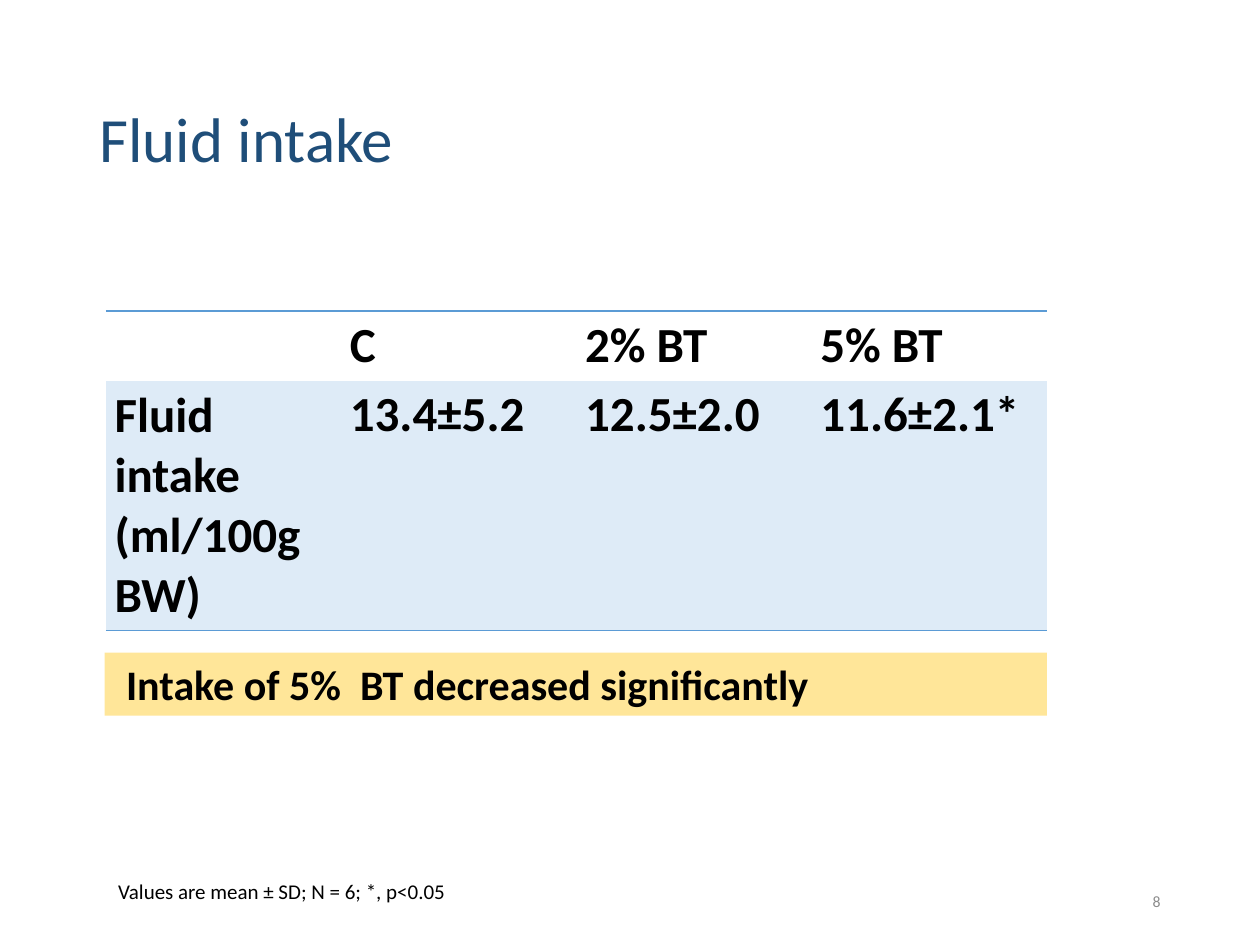
from lxml.etree import SubElement
from pptx import Presentation
from pptx.dml.color import RGBColor
from pptx.enum.shapes import MSO_SHAPE as Shape
from pptx.enum.text import MSO_ANCHOR as Anchor, PP_ALIGN as Align
from pptx.oxml.ns import qn
from pptx.util import Inches, Pt

COLORS = {
    "title": "1F4E79",
    "text": "000000",
    "number": "8C8C8C",
    "rule": "5B9BD5",
    "band": "DEEBF7",
    "banner": "FFE699",
}


def color(name):
    return RGBColor.from_string(COLORS[name])


class SlideBuilder:
    font_name = "Calibri"

    def __init__(self, presentation):
        self.slide = presentation.slides.add_slide(presentation.slide_layouts[5])

    def fill_text(self, frame, text, size, ink="text", bold=False,
                  align=Align.LEFT, spacing=1.0, **frame_format):
        for name, value in frame_format.items():
            setattr(frame, name, value)
        paragraph = frame.paragraphs[0]
        paragraph.alignment = align
        paragraph.line_spacing = spacing
        run = paragraph.add_run()
        run.text = text
        font_format = {"name": self.font_name, "size": Pt(size), "bold": bold}
        for name, value in font_format.items():
            setattr(run.font, name, value)
        run.font.color.rgb = color(ink)

    def title(self, text, left, top, width, height):
        shape = self.slide.shapes.title
        box = {"left": left, "top": top, "width": width, "height": height}
        for name, value in box.items():
            setattr(shape, name, Inches(value))
        self.fill_text(shape.text_frame, text, 36, "title", spacing=0.9,
                       vertical_anchor=Anchor.MIDDLE)

    def text(self, text, box, size, **text_format):
        shape = self.slide.shapes.add_textbox(*map(Inches, box))
        self.fill_text(shape.text_frame, text, size, **text_format)

    def banner(self, text, box):
        shape = self.slide.shapes.add_shape(Shape.RECTANGLE, *map(Inches, box))
        shape.shadow.inherit = False
        shape.fill.solid()
        shape.fill.fore_color.rgb = color("banner")
        shape.line.fill.background()
        self.fill_text(shape.text_frame, text, 24, bold=True, word_wrap=True,
                       margin_left=Inches(0.17), vertical_anchor=Anchor.TOP)

    def borders(self, cell, ruled_sides):
        properties = cell._tc.get_or_add_tcPr()
        for side in ("L", "R", "T", "B"):
            line = SubElement(properties, qn(f"a:ln{side}"), w=str(Pt(1)))
            if side in ruled_sides:
                fill = SubElement(line, qn("a:solidFill"))
                SubElement(fill, qn("a:srgbClr"), val=COLORS["rule"])
            else:
                SubElement(line, qn("a:noFill"))

    def table(self, rows, box, row_heights):
        table = self.slide.shapes.add_table(
            len(rows), len(rows[0]), *map(Inches, box)).table
        table.first_row = table.horz_banding = False
        for row, height in zip(table.rows, row_heights):
            row.height = Inches(height)
        for row_index, values in enumerate(rows):
            for column_index, value in enumerate(values):
                cell = table.cell(row_index, column_index)
                is_value = row_index > 0 and column_index > 0
                vertical = Inches(0 if is_value else 0.04)
                margins = {"margin_left": Inches(0.07), "margin_right": Inches(0.07),
                           "margin_top": vertical, "margin_bottom": vertical}
                for name, margin in margins.items():
                    setattr(cell, name, margin)
                # Borders come before the fill in the cell properties
                self.borders(cell, "B" if row_index else "TB")
                if row_index:
                    cell.fill.solid()
                    cell.fill.fore_color.rgb = color("band")
                else:
                    cell.fill.background()
                if value:
                    self.fill_text(cell.text_frame, value, 28, bold=True,
                                   spacing=1.07 if is_value else 1.0)


def main():
    presentation = Presentation()
    presentation.slide_width = Inches(10)
    presentation.slide_height = Inches(7.5)
    builder = SlideBuilder(presentation)

    # Title
    builder.title("Fluid intake", 0.69, 0.4, 8.62, 1.45)

    # Intake by group
    builder.table(
        [["", "C", "2% BT", "5% BT"],
         ["Fluid intake (ml/100g BW)", "13.4±5.2", "12.5±2.0", "11.6±2.1*"]],
        (0.84, 2.47, 7.47, 2.52), (0.55, 1.97))

    # Conclusion
    builder.banner("Intake of 5%  BT decreased significantly",
                   (0.83, 5.18, 7.48, 0.5))

    # Footnote and slide number
    builder.text("Values are mean ± SD; N = 6; *, p<0.05",
                 (0.84, 6.92, 2.87, 0.3), 12, word_wrap=False)
    builder.text("8", (7.06, 6.95, 2.25, 0.4), 9, ink="number", word_wrap=True,
                 align=Align.RIGHT, vertical_anchor=Anchor.MIDDLE)

    presentation.save("out.pptx")


if __name__ == "__main__":
    main()
